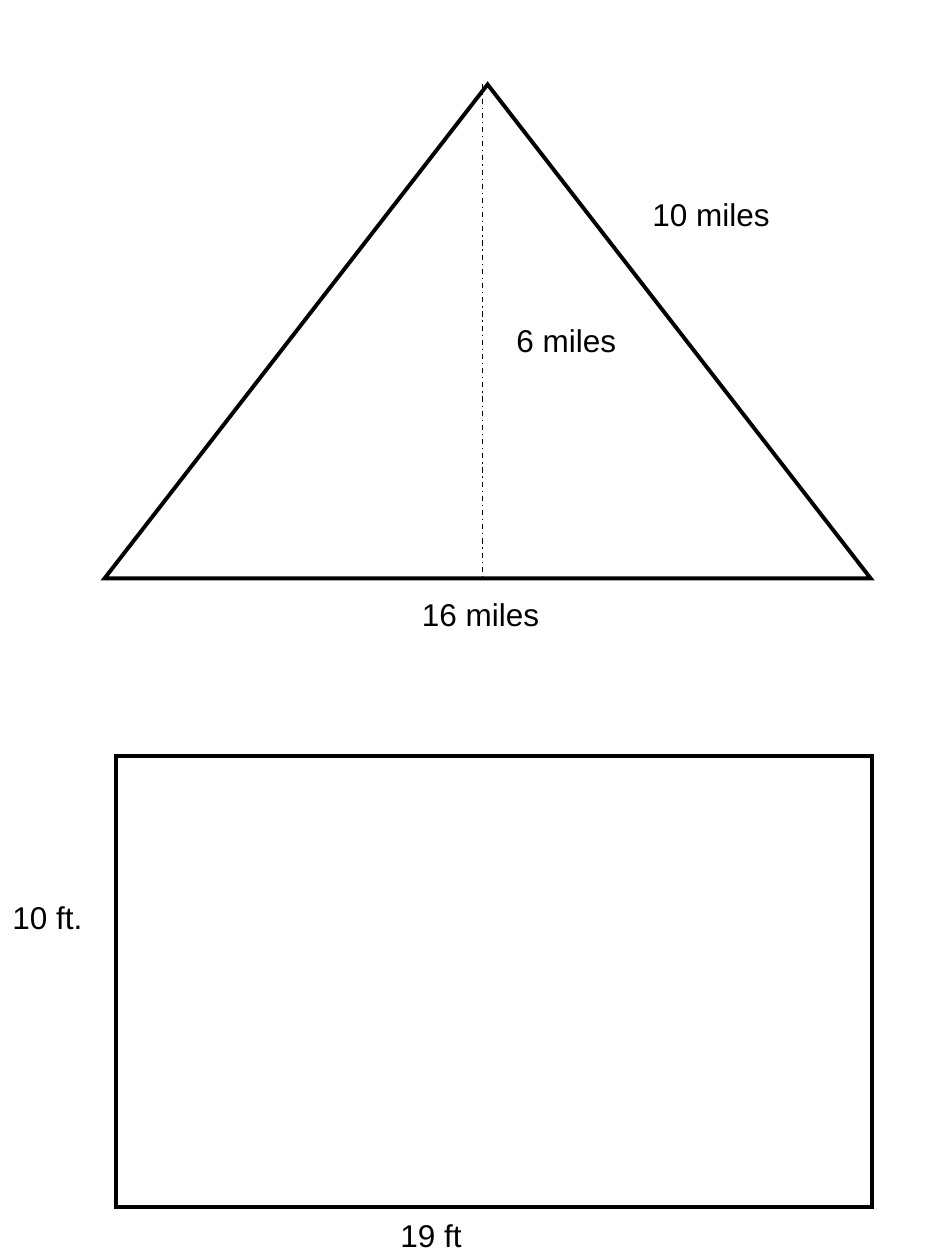
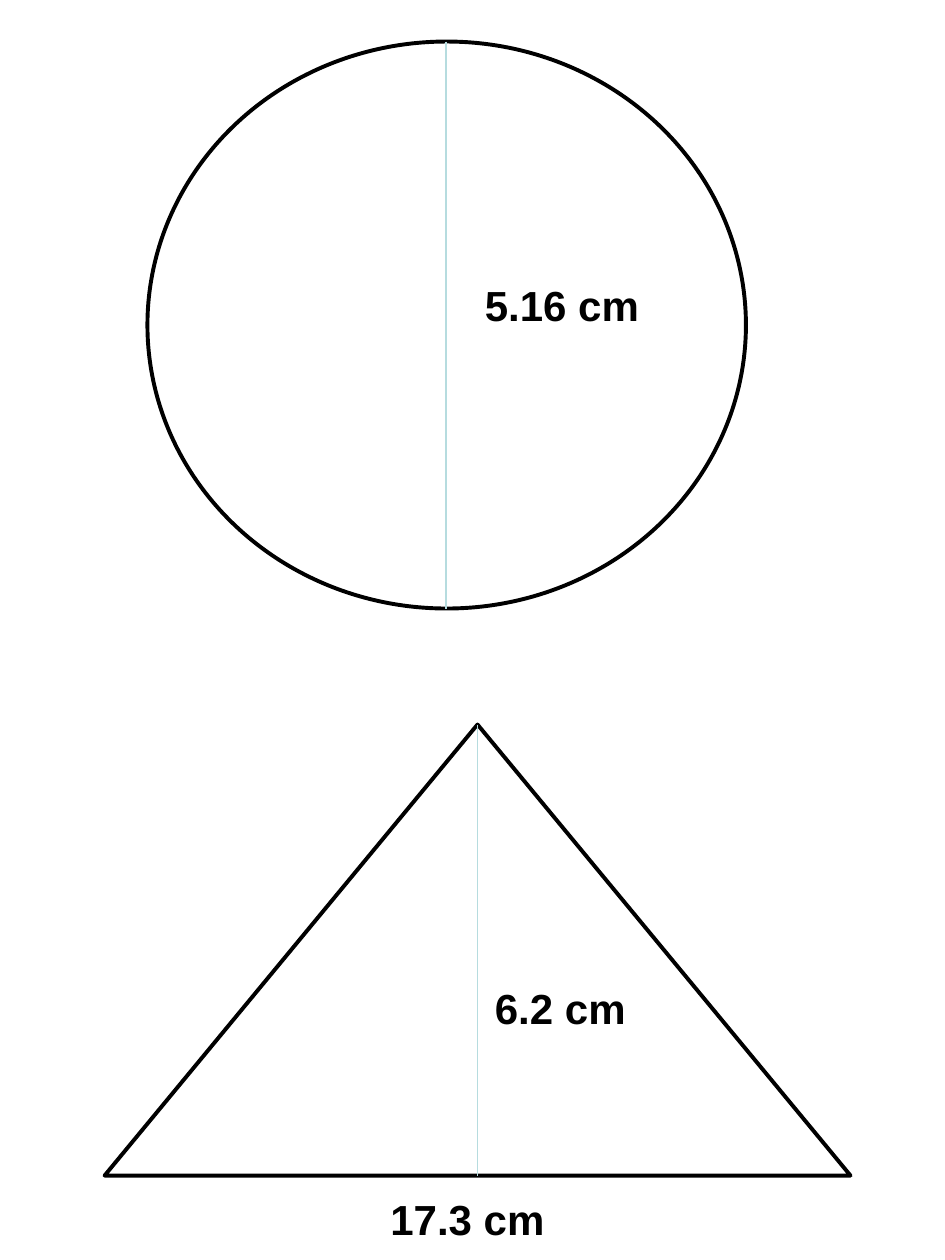
"""Build two slides of labelled geometric figures for area practice."""
from dataclasses import dataclass
from typing import Any

from lxml import etree
from pptx import Presentation
from pptx.dml.color import RGBColor
from pptx.enum.dml import MSO_LINE
from pptx.enum.shapes import MSO_CONNECTOR, MSO_SHAPE
from pptx.enum.text import MSO_AUTO_SIZE
from pptx.oxml.ns import qn
from pptx.slide import Slide
from pptx.util import Inches, Pt

TRIANGLE = MSO_SHAPE.ISOSCELES_TRIANGLE
RECTANGLE = MSO_SHAPE.RECTANGLE
ELLIPSE = MSO_SHAPE.OVAL
STRAIGHT = MSO_CONNECTOR.STRAIGHT
DASH_DOT = MSO_LINE.DASH_DOT
SOLID = MSO_LINE.SOLID
GROW = MSO_AUTO_SIZE.SHAPE_TO_FIT_TEXT


@dataclass(frozen=True)
class Theme:
    """Shared colours, font, type sizes and line widths."""
    ink: RGBColor = RGBColor(0x00, 0x00, 0x00)
    pale: RGBColor = RGBColor(0xB6, 0xDC, 0xDF)
    font: str = "Arial"
    small: Pt = Pt(18)
    large: Pt = Pt(24)
    outline: Pt = Pt(2.25)
    hairline: Pt = Pt(0.75)


THEME = Theme()


@dataclass(frozen=True)
class Style:
    """Look of the labels, corners and measuring lines on one slide."""
    text: dict[str, Any]
    label_height: float
    corner: str
    measure: RGBColor
    dash: MSO_LINE


@dataclass(frozen=True)
class Figure:
    """An outlined figure, with the x of its vertical measure if it has one."""
    kind: MSO_SHAPE
    left: float
    top: float
    width: float
    height: float
    measure_x: float | None = None


@dataclass(frozen=True)
class Label:
    """A dimension written beside a figure."""
    words: str
    left: float
    top: float
    width: float


MILES_AND_FEET = Style({"name": THEME.font, "size": THEME.small, "bold": False},
                       0.4, "a:miter", THEME.ink, DASH_DOT)
CENTIMETRES = Style({"name": THEME.font, "size": THEME.large, "bold": True},
                    0.51, "a:round", THEME.pale, SOLID)

PAGES: list[tuple[Style, list[Figure], list[Label]]] = [
    (MILES_AND_FEET,
     [Figure(TRIANGLE, 0.83, 0.67, 6.08, 3.92, 3.83),
      Figure(RECTANGLE, 0.92, 6, 6, 3.58)],
     [Label("16 miles", 3.25, 4.67, 1.92),
      Label("6 miles", 4, 2.5, 1.08),
      Label("10 miles", 5.08, 1.5, 1.5),
      Label("19 ft", 3.08, 9.6, 2.75),
      Label("10 ft.", 0, 7.08, 0.92)]),
    (CENTIMETRES,
     [Figure(ELLIPSE, 1.17, 0.33, 4.75, 4.5, 3.54),
      Figure(TRIANGLE, 0.83, 5.75, 5.92, 3.58, 3.79)],
     [Label("5.16 cm", 3.75, 2.17, 1.67),
      Label("17.3 cm", 3, 9.42, 1.67),
      Label("6.2 cm", 3.83, 7.75, 1.67)]),
]


def draw_figure(slide: Slide, figure: Figure, style: Style) -> None:
    """Outline a figure and draw its vertical measure."""
    outline = slide.shapes.add_shape(
        figure.kind, Inches(figure.left), Inches(figure.top),
        Inches(figure.width), Inches(figure.height))
    outline.shadow.inherit = False
    outline.fill.background()
    outline.line.color.rgb = THEME.ink
    outline.line.width = THEME.outline
    corner = etree.SubElement(outline.line._get_or_add_ln(), qn(style.corner))
    if style.corner == "a:miter":
        corner.set("lim", "800000")
    if figure.measure_x is None:
        return
    x = Inches(figure.measure_x)
    measure = slide.shapes.add_connector(
        STRAIGHT, x, Inches(figure.top), x, Inches(figure.top + figure.height))
    measure.line.color.rgb = style.measure
    measure.line.width = THEME.hairline
    measure.line.dash_style = style.dash
    etree.SubElement(measure._element.spPr, qn("a:effectLst"))


def draw_label(slide: Slide, label: Label, style: Style) -> None:
    """Write a dimension in the slide's label style."""
    frame = slide.shapes.add_textbox(
        Inches(label.left), Inches(label.top),
        Inches(label.width), Inches(style.label_height)).text_frame
    frame.word_wrap = True
    frame.auto_size = GROW
    dimension = frame.paragraphs[0].add_run()
    dimension.text = label.words
    for attribute, value in style.text.items():
        setattr(dimension.font, attribute, value)
    dimension.font.color.rgb = THEME.ink


def main() -> None:
    """Draw every page and save the presentation."""
    deck = Presentation()
    deck.slide_width, deck.slide_height = Inches(7.5), Inches(10)
    blank = deck.slide_layouts.get_by_name("Blank")
    for style, figures, labels in PAGES:
        slide = deck.slides.add_slide(blank)
        for figure in figures:
            draw_figure(slide, figure, style)
        for label in labels:
            draw_label(slide, label, style)
    deck.save("out.pptx")


if __name__ == "__main__":
    main()
